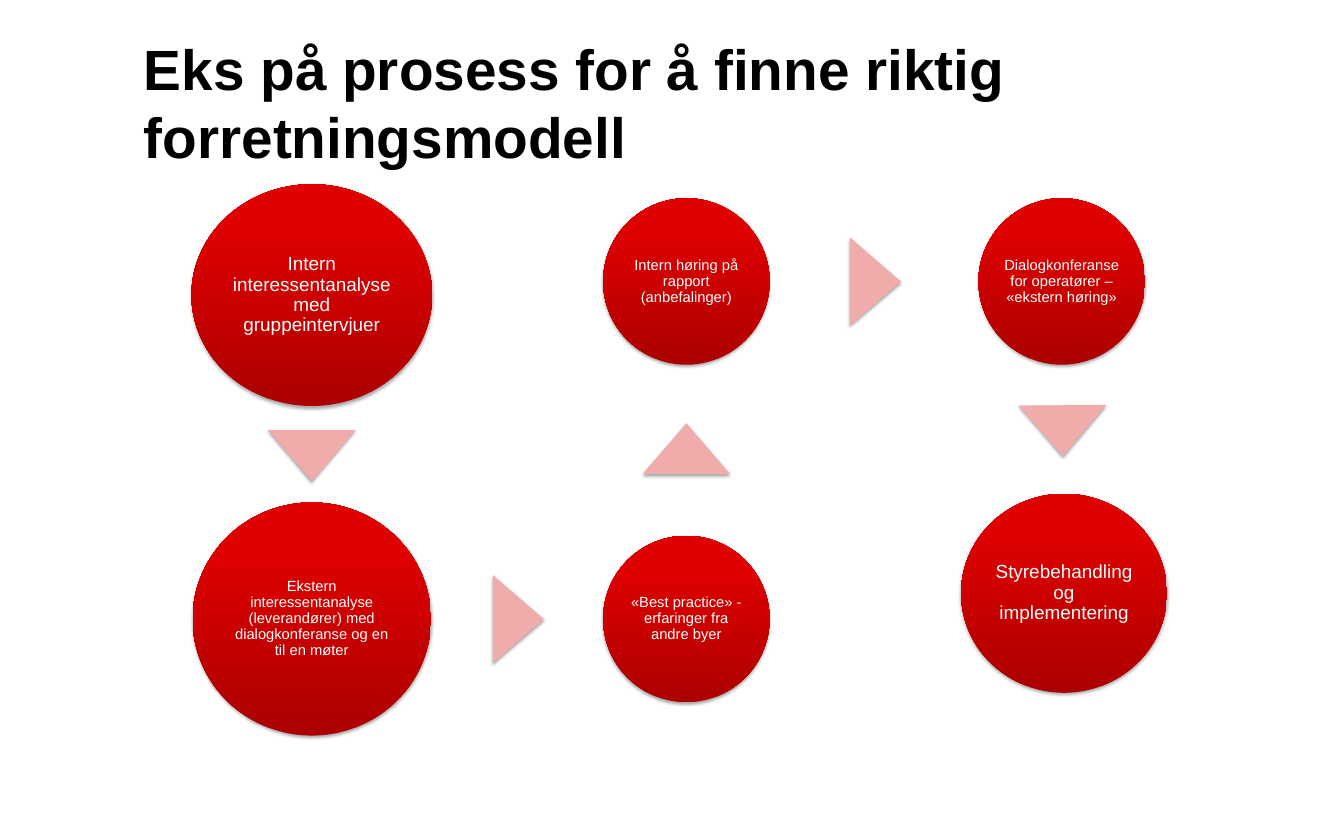
from copy import deepcopy
from dataclasses import dataclass

from lxml.etree import SubElement
from pptx import Presentation
from pptx.dml.color import RGBColor
from pptx.enum.shapes import MSO_SHAPE
from pptx.enum.text import MSO_ANCHOR, MSO_AUTO_SIZE, PP_ALIGN
from pptx.oxml.ns import qn
from pptx.shapes.autoshape import Shape
from pptx.slide import Slide
from pptx.text.text import TextFrame
from pptx.util import Inches, Pt

BLACK = RGBColor(0x00, 0x00, 0x00)
WHITE = RGBColor(0xFF, 0xFF, 0xFF)
DARK_RED = RGBColor(0xAC, 0x00, 0x00)
RED = RGBColor(0xDF, 0x00, 0x00)
BRIGHT_RED = RGBColor(0xE0, 0x00, 0x00)
PINK = RGBColor(0xF0, 0xAB, 0xAB)

LEFT, MIDDLE, RIGHT = 4.12, 9.07, 14.03
TOP, BOTTOM = 3.72, 8.18
ARROW_W, ARROW_H = 1.16, 0.67


@dataclass
class Step:
    text: str
    x: float
    y: float
    width: float = 2.2
    height: float = 2.2
    size: float = 14
    inset: float = 0.0


@dataclass
class Arrow:
    x: float
    y: float
    rotation: float


STEPS = [
    Step("Intern interessentanalyse med gruppeintervjuer", LEFT, 3.9, 3.18, 2.93, 18, 0.03),
    Step("Ekstern interessentanalyse (leverandører) med dialogkonferanse og en til en møter",
         LEFT, BOTTOM, 3.15, 3.08, inset=0.02),
    Step("«Best practice» - erfaringer fra andre byer", MIDDLE, BOTTOM),
    Step("Intern høring på rapport (anbefalinger)", MIDDLE, TOP),
    Step("Dialogkonferanse for operatører – «ekstern høring»", RIGHT, TOP),
    Step("Styrebehandling og implementering", 14.06, 7.84, 2.72, 2.63, 18, 0.03),
]
ARROWS = [
    Arrow(LEFT, 6.02, 180),
    Arrow(6.85, BOTTOM, 90),
    Arrow(MIDDLE, 5.93, 0),
    Arrow(11.57, TOP, 90),
    Arrow(14.04, 5.69, 179.6),
]


def write(tf: TextFrame, text: str, *, size: float, color: RGBColor, bold: bool = False,
          align: PP_ALIGN = PP_ALIGN.LEFT, anchor: MSO_ANCHOR = MSO_ANCHOR.MIDDLE,
          spacing: float = 1.0, inset_x: float = 0.0, inset_y: float = 0.0) -> None:
    tf.auto_size = MSO_AUTO_SIZE.NONE
    tf.word_wrap = True
    tf.vertical_anchor = anchor
    tf.margin_left = tf.margin_right = Inches(inset_x)
    tf.margin_top = tf.margin_bottom = Inches(inset_y)
    p = tf.paragraphs[0]
    p.alignment = align
    p.line_spacing = spacing
    p.space_before = Pt(0)
    r = p.add_run()
    r.text = text
    r.font.name = "Arial"
    r.font.size = Pt(size)
    r.font.bold = bold
    r.font.color.rgb = color


def add_centred(s: Slide, kind: MSO_SHAPE, x: float, y: float, width: float, height: float) -> Shape:
    """Add a borderless shape with a soft shadow, centred on x, y."""
    sp = s.shapes.add_shape(kind, Inches(x - width / 2), Inches(y - height / 2),
                            Inches(width), Inches(height))
    sp.line.fill.background()
    sp.shadow.inherit = False
    effects = sp.element.spPr.find(qn("a:effectLst"))
    shadow = SubElement(effects, qn("a:outerShdw"), blurRad="40000", dist="23000",
                        dir="5400000", rotWithShape="0")
    color = SubElement(shadow, qn("a:srgbClr"), val="000000")
    SubElement(color, qn("a:alpha"), val="35000")
    return sp


def fill_red_gradient(sp: Shape) -> None:
    sp.fill.gradient()
    sp.fill.gradient_angle = 90
    first = sp.element.spPr.find(".//" + qn("a:gs"))
    first.addnext(deepcopy(first))
    stops = zip(sp.fill.gradient_stops, (0, 0.8, 1), (DARK_RED, RED, BRIGHT_RED))
    for stop, position, color in stops:
        stop.position = position
        stop.color.rgb = color


def add_step(s: Slide, step: Step) -> None:
    sp = add_centred(s, MSO_SHAPE.OVAL, step.x, step.y, step.width, step.height)
    fill_red_gradient(sp)
    write(sp.text_frame, step.text, size=step.size, color=WHITE, align=PP_ALIGN.CENTER,
          spacing=0.9, inset_x=step.inset, inset_y=step.inset)


def add_arrow(s: Slide, arrow: Arrow) -> None:
    sp = add_centred(s, MSO_SHAPE.ISOSCELES_TRIANGLE, arrow.x, arrow.y, ARROW_W, ARROW_H)
    sp.fill.solid()
    sp.fill.fore_color.rgb = PINK
    sp.rotation = arrow.rotation


def main() -> None:
    prs = Presentation()
    prs.slide_width, prs.slide_height = Inches(17.76), Inches(11.1)
    s = prs.slides.add_slide(prs.slide_layouts.get_by_name("Title Only"))
    title = s.shapes.title
    title.left, title.top = Inches(1.72), Inches(0.84)
    title.width, title.height = Inches(15.68), Inches(1.49)
    write(title.text_frame, "Eks på prosess for å finne riktig forretningsmodell", size=54,
          color=BLACK, bold=True, anchor=MSO_ANCHOR.BOTTOM, inset_x=0.18, inset_y=0.09)
    for step in STEPS:
        add_step(s, step)
    for arrow in ARROWS:
        add_arrow(s, arrow)
    prs.save("out.pptx")


if __name__ == "__main__":
    main()
